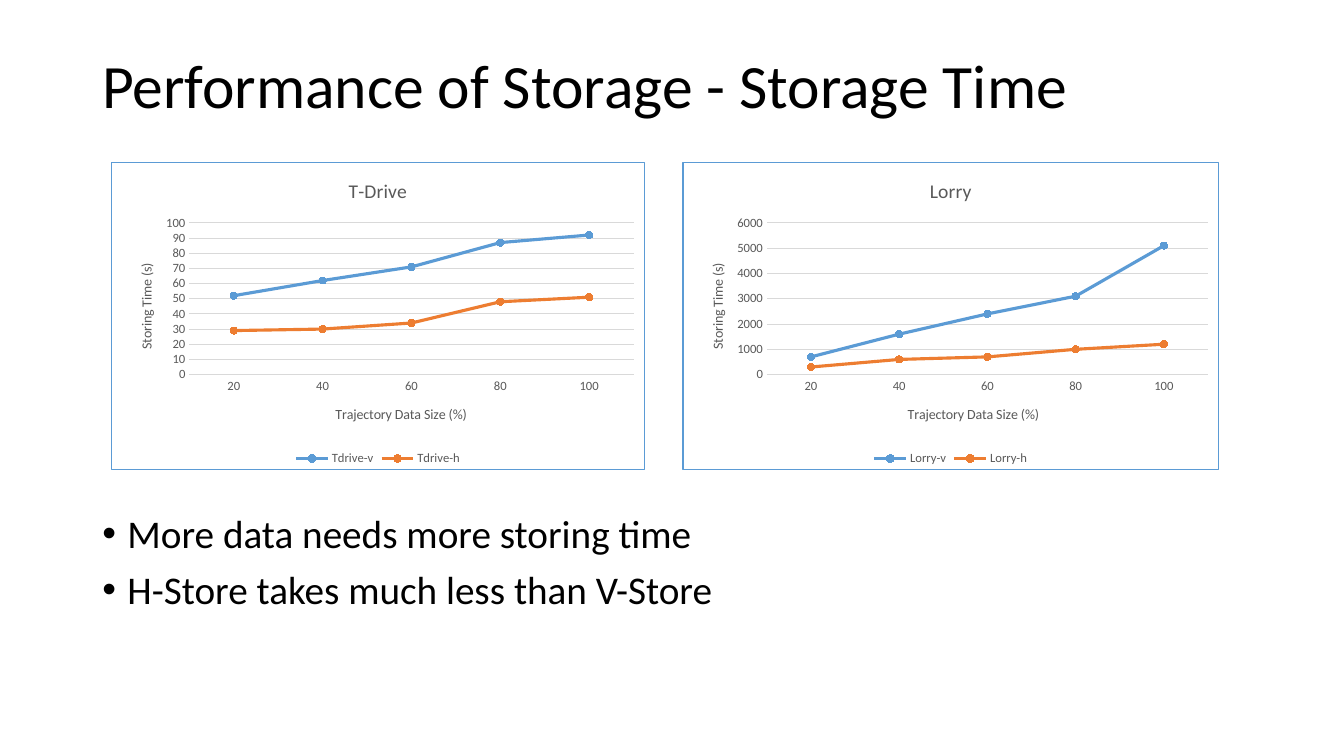
from dataclasses import dataclass
from typing import Any

from lxml.etree import SubElement as Sub
from pptx import Presentation
from pptx.chart.data import CategoryChartData as Data
from pptx.dml.color import RGBColor as Color
from pptx.enum.chart import XL_CHART_TYPE as Kind
from pptx.enum.chart import XL_LEGEND_POSITION as Side
from pptx.enum.chart import XL_MARKER_STYLE as Mark
from pptx.enum.chart import XL_TICK_MARK as Tick
from pptx.enum.text import MSO_ANCHOR as Anchor
from pptx.oxml import parse_xml
from pptx.oxml.ns import nsdecls, qn
from pptx.util import Pt

SCALE = 9525
FACE = "Calibri"
BLACK, GRAY, RULE = "000000", "595959", "D9D9D9"
BLUE, ORANGE = "5B9BD5", "ED7D31"
SIZES = ("20", "40", "60", "80", "100")
TOP, HIGH = 154, 294
PLOT_TOP, PLOT_HIGH, MARGIN = 58, 145, 10


@dataclass
class Words:
    top: int
    high: int
    lines: tuple[str, ...]
    size: int
    anchor: Any
    bullet: bool = False


@dataclass
class Panel:
    title: str
    left: int
    wide: int
    inset: int
    peak: int
    step: int
    series: dict[str, tuple[int, ...]]


TEXTS = (
    Words(33, 102, ("Performance of Storage - Storage Time",), 44, Anchor.MIDDLE),
    Words(485, 163, ("More data needs more storing time",
                     "H-Store takes much less than V-Store"), 28, Anchor.TOP, True),
)
PANELS = (
    Panel("T-Drive", 106, 508, 74, 100, 10,
          {"Tdrive-v": (52, 62, 71, 87, 92), "Tdrive-h": (29, 30, 34, 48, 51)}),
    Panel("Lorry", 650, 511, 80, 6000, 1000,
          {"Lorry-v": (700, 1600, 2400, 3100, 5100),
           "Lorry-h": (300, 600, 700, 1000, 1200)}),
)


def px(count: int) -> int:
    return count * SCALE


def paint(code: str) -> Color:
    return Color.from_string(code)


def apply(item: Any, values: dict[str, Any]) -> None:
    for name, value in values.items():
        setattr(item, name, value)


def style(font: Any, size: int, code: str) -> None:
    apply(font, {"name": FACE, "size": Pt(size), "bold": False})
    font.color.rgb = paint(code)


def stroke(line: Any, code: str, width: float) -> None:
    line.color.rgb = paint(code)
    line.width = Pt(width)


def write(slide: Any, words: Words) -> None:
    box = slide.shapes.add_textbox(px(88), px(words.top), px(1104), px(words.high))
    frame = box.text_frame
    apply(frame, {"word_wrap": True, "vertical_anchor": words.anchor})
    for spot, line in enumerate(words.lines):
        para = frame.add_paragraph() if spot else frame.paragraphs[0]
        para.line_spacing = 0.9
        run = para.add_run()
        run.text = line
        style(run.font, words.size, BLACK)
        if words.bullet:
            para.space_before = Pt(10)
            props = para._p.get_or_add_pPr()
            props.set("marL", str(px(24)))
            props.set("indent", str(-px(24)))
            Sub(props, qn("a:buFont"), typeface="Arial")
            Sub(props, qn("a:buChar"), char="•")


def place(parent: Any, panel: Panel, spot: tuple[int, int],
          size: tuple[int, int] | None = None) -> None:
    layout = parent.find(qn("c:layout"))
    if layout is None:
        layout = parse_xml(f"<c:layout {nsdecls('c')}/>")
        parent.insert(0, layout)
    manual = Sub(layout, qn("c:manualLayout"))
    if size:
        Sub(manual, qn("c:layoutTarget"), val="inner")
    for mode in ("xMode", "yMode"):
        Sub(manual, qn(f"c:{mode}"), val="edge")
    for name, length, full in zip("xywh", spot + (size or ()),
                                  (panel.wide, HIGH) * 2):
        Sub(manual, qn(f"c:{name}"), val=str(round(length / full, 4)))


def label(title: Any, text: str, size: int) -> None:
    title.text_frame.text = text
    style(title.text_frame.paragraphs[0].runs[0].font, size, GRAY)


def dress(axis: Any, text: str, panel: Panel, spot: tuple[int, int]) -> None:
    apply(axis, {"major_tick_mark": Tick.NONE, "minor_tick_mark": Tick.NONE})
    style(axis.tick_labels.font, 9, GRAY)
    label(axis.axis_title, text, 10)
    place(axis.axis_title._element, panel, spot)


def border(chart: Any) -> None:
    props = parse_xml(
        f"<c:spPr {nsdecls('c', 'a')}><a:noFill/><a:ln w=\"{Pt(0.75)}\"><a:solidFill>"
        f"<a:srgbClr val=\"{BLUE}\"/></a:solidFill></a:ln></c:spPr>")
    chart.element.find(qn("c:txPr")).addprevious(props)


def plot(slide: Any, panel: Panel) -> None:
    data = Data()
    data.categories = SIZES
    for name, values in panel.series.items():
        data.add_series(name, values)
    chart = slide.shapes.add_chart(Kind.LINE_MARKERS, px(panel.left), px(TOP),
                                   px(panel.wide), px(HIGH), data).chart
    style(chart.font, 10, BLACK)
    border(chart)
    chart.has_title = True
    label(chart.chart_title, panel.title, 14)
    chart.has_legend = True
    apply(chart.legend, {"position": Side.BOTTOM, "include_in_layout": False})
    style(chart.legend.font, 9, GRAY)

    base, rise = chart.category_axis, chart.value_axis
    dress(base, "Trajectory Data Size (%)", panel, (panel.wide // 2 - 43, 230))
    dress(rise, "Storing Time (s)", panel, (22, 94))
    rise.axis_title.text_frame._txBody.bodyPr.set("rot", "-5400000")
    stroke(base.format.line, RULE, 0.75)
    rise.format.line.fill.background()
    apply(rise, {"minimum_scale": 0, "maximum_scale": panel.peak,
                 "major_unit": panel.step, "has_major_gridlines": True})
    stroke(rise.major_gridlines.format.line, RULE, 0.75)
    place(chart.element.find(".//" + qn("c:plotArea")), panel, (panel.inset, PLOT_TOP),
          (panel.wide - panel.inset - MARGIN, PLOT_HIGH))

    chart.plots[0].vary_by_categories = False
    for series, code in zip(chart.plots[0].series, (BLUE, ORANGE)):
        series.smooth = False
        stroke(series.format.line, code, 2.25)
        apply(series.marker, {"style": Mark.CIRCLE, "size": 5})
        look = series.marker.format
        look.fill.solid()
        look.fill.fore_color.rgb = paint(code)
        stroke(look.line, code, 0.75)


def main() -> None:
    deck = Presentation()
    apply(deck, {"slide_width": px(1280), "slide_height": px(720)})
    slide = deck.slides.add_slide(deck.slide_layouts[6])
    for words in TEXTS:
        write(slide, words)
    for panel in PANELS:
        plot(slide, panel)
    deck.save("out.pptx")


if __name__ == "__main__":
    main()
